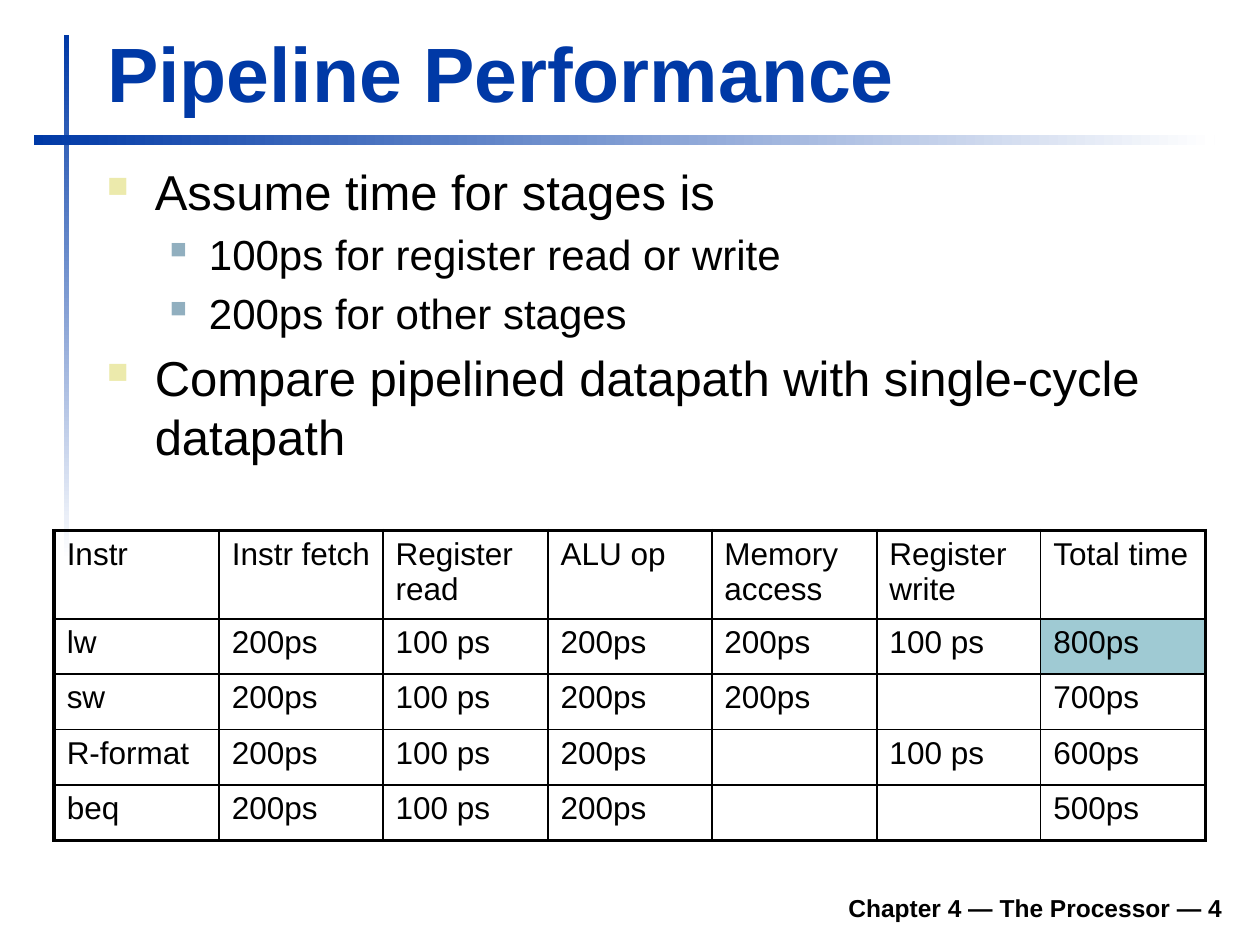
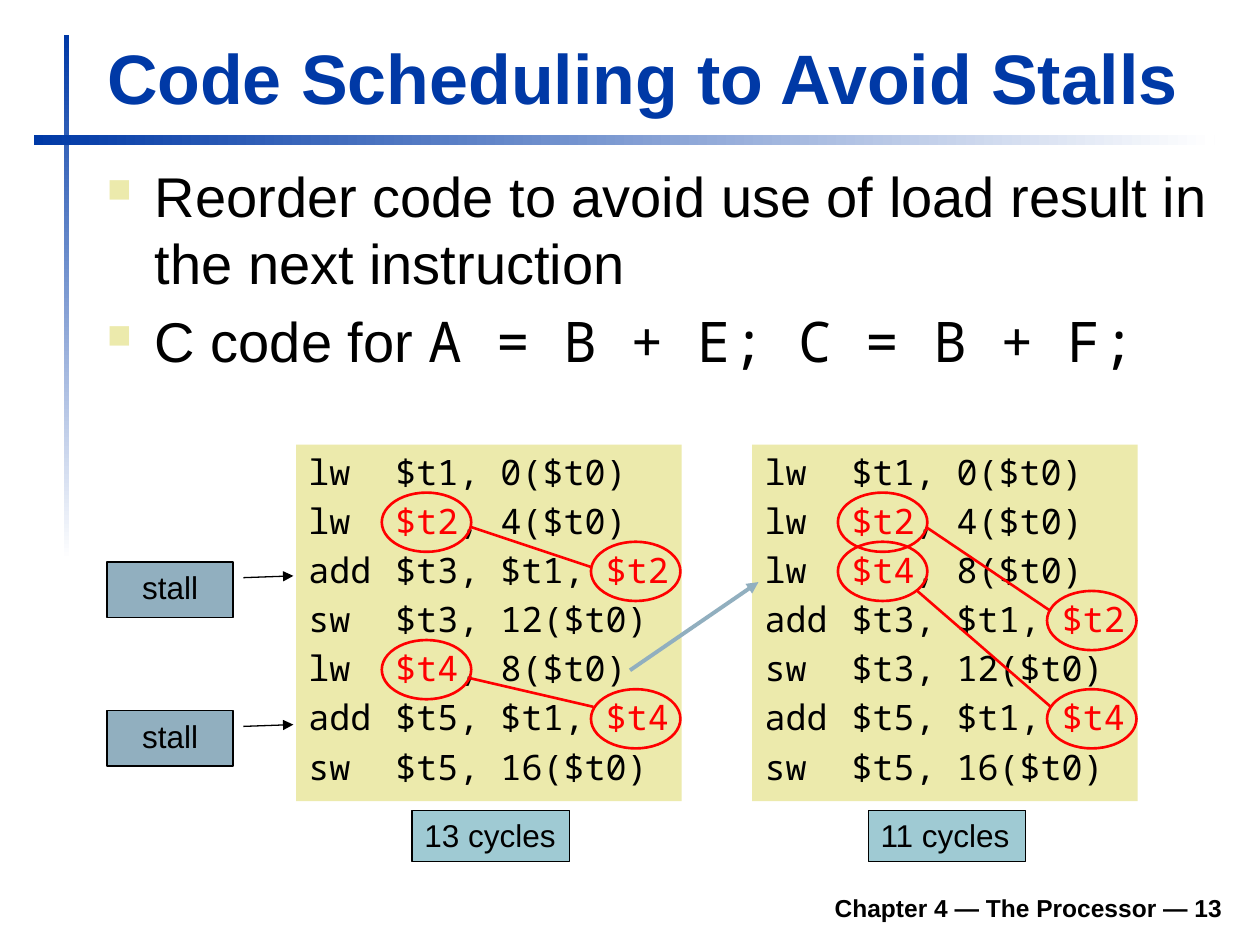
from lxml import etree
from pptx import Presentation
from pptx.dml.color import RGBColor
from pptx.enum.shapes import MSO_CONNECTOR, MSO_SHAPE
from pptx.enum.text import MSO_ANCHOR, MSO_AUTO_SIZE, PP_ALIGN
from pptx.oxml.ns import qn
from pptx.util import Inches, Pt

BLUE = RGBColor(0x00, 0x39, 0xA6)
WHITE = RGBColor(0xFF, 0xFF, 0xFF)
BLACK = RGBColor(0x00, 0x00, 0x00)
RED = RGBColor(0xFF, 0x00, 0x00)
SAND = RGBColor(0xEC, 0xEA, 0xAC)
STEEL = RGBColor(0x91, 0xAF, 0xBF)
TEAL = RGBColor(0x9F, 0xCA, 0xD3)

BODY_FONT = "Arial"
CODE_FONT = "Noto Sans Mono"
RECTANGLE = MSO_SHAPE.RECTANGLE
OVAL = MSO_SHAPE.OVAL
CALLOUT = MSO_SHAPE.LINE_CALLOUT_1
STRAIGHT = MSO_CONNECTOR.STRAIGHT
LEFT, CENTER, RIGHT = PP_ALIGN.LEFT, PP_ALIGN.CENTER, PP_ALIGN.RIGHT
TOP, BOTTOM = MSO_ANCHOR.TOP, MSO_ANCHOR.BOTTOM
FIT_SHAPE = MSO_AUTO_SIZE.SHAPE_TO_FIT_TEXT

BULLET_LEVELS = [(0.38, 0.38, SAND, 60), (0.81, 0.31, STEEL, 55)]


def add_xml(parent, tag, **attributes):
    return etree.SubElement(parent, qn(tag), attributes)


def add_space_before(properties):
    add_xml(add_xml(properties, "a:spcBef"), "a:spcPct", val="20000")


def add_arrowhead(shape):
    add_xml(shape.element.spPr.find(qn("a:ln")), "a:tailEnd", type="triangle")


class SlideBuilder:
    def __init__(self):
        self.deck = Presentation()
        self.deck.slide_width = Inches(10)
        self.deck.slide_height = Inches(7.5)
        self.page = None

    def start(self, title, size, number):
        self.page = self.deck.slides.add_slide(self.deck.slide_layouts[5])
        self.band(0.51, 0.28, 0.04, 4.17, 270)
        self.band(0.27, 1.07, 9.37, 0.08, 0)
        heading = self.page.shapes.title
        heading.left, heading.top = Inches(0.75), Inches(0.16)
        heading.width, heading.height = Inches(9.03), Inches(0.83)
        self.set_text(heading, title, size, BLUE, LEFT, BOTTOM, bold=True)
        heading.text_frame.auto_size = FIT_SHAPE
        footer = self.page.shapes.add_textbox(
            Inches(1.85), Inches(6.98), Inches(7.95), Inches(0.39))
        self.set_text(footer, f"Chapter 4 — The Processor — {number}", 14,
                      align=RIGHT, anchor=BOTTOM, bold=True)

    def style(self, span, size, color=BLACK, font=BODY_FONT, bold=False):
        span.font.name = font
        span.font.size = Pt(size)
        span.font.bold = bold
        span.font.color.rgb = color

    def set_text(self, box, text, size, color=BLACK, align=LEFT, anchor=TOP, bold=False):
        frame = box.text_frame
        frame.text = text
        frame.word_wrap = True
        frame.vertical_anchor = anchor
        para = frame.paragraphs[0]
        para.alignment = align
        for span in para.runs:
            self.style(span, size, color, bold=bold)

    def add_span(self, para, text, size, color=BLACK, font=BODY_FONT):
        span = para.add_run()
        span.text = text
        self.style(span, size, color, font)

    def shape(self, kind, left, top, width, height, fill=None, line=None, weight=0.75):
        box = self.page.shapes.add_shape(
            kind, Inches(left), Inches(top), Inches(width), Inches(height))
        box.shadow.inherit = False
        if fill is None:
            box.fill.background()
        else:
            box.fill.solid()
            box.fill.fore_color.rgb = fill
        if line is None:
            box.line.fill.background()
        else:
            box.line.color.rgb = line
            box.line.width = Pt(weight)
        return box

    def band(self, left, top, width, height, angle):
        bar = self.shape(RECTANGLE, left, top, width, height)
        bar.fill.gradient()
        bar.fill.gradient_angle = angle
        for stop, color in zip(bar.fill.gradient_stops, (BLUE, WHITE)):
            stop.color.rgb = color

    def bullets(self, height, items):
        box = self.page.shapes.add_textbox(
            Inches(0.75), Inches(1.23), Inches(9.05), Inches(height))
        frame = box.text_frame
        frame.word_wrap = True
        for index, (level, size, spans) in enumerate(items):
            para = frame.add_paragraph() if index else frame.paragraphs[0]
            para.level = level
            margin, hanging, color, percent = BULLET_LEVELS[level]
            properties = para._p.get_or_add_pPr()
            properties.set("marL", str(Inches(margin)))
            properties.set("indent", str(-Inches(hanging)))
            add_space_before(properties)
            add_xml(add_xml(properties, "a:buClr"), "a:srgbClr", val=str(color))
            add_xml(properties, "a:buSzPct", val=str(percent * 1000))
            add_xml(properties, "a:buChar", char="■")
            for text, font in spans:
                self.add_span(para, text, size, font=font)

    def code(self, left, top, lines):
        box = self.shape(RECTANGLE, left, top, 3.06, 2.83, SAND)
        frame = box.text_frame
        frame.word_wrap = False
        frame.auto_size = FIT_SHAPE
        frame.vertical_anchor = TOP
        for index, parts in enumerate(lines):
            para = frame.add_paragraph() if index else frame.paragraphs[0]
            para.alignment = LEFT
            properties = para._p.get_or_add_pPr()
            add_space_before(properties)
            tabs = add_xml(properties, "a:tabLst")
            add_xml(tabs, "a:tab", pos=str(Inches(0.69)), algn="l")
            for position, text in enumerate(parts):
                self.add_span(para, text, 20, RED if position == 1 else BLACK, CODE_FONT)

    def stall(self, top):
        box = self.shape(CALLOUT, 0.85, top, 1, 0.44, STEEL, BLACK)
        for index, value in enumerate((0.285, 1.083, 0.253, 1.479)):
            box.adjustments[index] = value
        add_arrowhead(box)
        self.set_text(box, "stall", 18, align=CENTER)

    def cycles(self, left, text):
        box = self.shape(RECTANGLE, left, 6.43, 1.25, 0.41, TEAL, BLACK)
        self.set_text(box, text, 18)
        box.text_frame.word_wrap = False
        box.text_frame.auto_size = FIT_SHAPE

    def link(self, start, end, color=RED, weight=1.5, arrow=False):
        line = self.page.shapes.add_connector(
            STRAIGHT, *(Inches(value) for value in start + end))
        line.line.color.rgb = color
        line.line.width = Pt(weight)
        if arrow:
            add_arrowhead(line)
        add_xml(line.element.spPr, "a:effectLst")

    def table(self, left, top, widths, heights, rows, highlight):
        grid = self.page.shapes.add_table(
            len(rows), len(widths), Inches(left), Inches(top),
            Inches(sum(widths)), Inches(sum(heights))).table
        grid.first_row = grid.horz_banding = False
        for column, width in zip(grid.columns, widths):
            column.width = Inches(width)
        for row, height in zip(grid.rows, heights):
            row.height = Inches(height)
        last_row, last_column = len(rows) - 1, len(widths) - 1
        for r, texts in enumerate(rows):
            for c, text in enumerate(texts):
                cell = grid.cell(r, c)
                self.set_cell_text(cell, text)
                self.borders(cell, {
                    "a:lnL": 2.25 if c == 0 else 1,
                    "a:lnR": 2.25 if c == last_column else 1,
                    "a:lnT": {0: 2.25, 1: 1.5}.get(r, 1),
                    "a:lnB": {0: 1.5, last_row: 2.25}.get(r, 1)})
                if (r, c) == highlight:
                    cell.fill.solid()
                    cell.fill.fore_color.rgb = TEAL
                else:
                    cell.fill.background()

    def set_cell_text(self, cell, text):
        cell.text_frame.text = text
        cell.vertical_anchor = TOP
        para = cell.text_frame.paragraphs[0]
        add_space_before(para._p.get_or_add_pPr())
        for span in para.runs:
            self.style(span, 18)

    def borders(self, cell, weights):
        properties = cell._tc.get_or_add_tcPr()
        for tag, weight in weights.items():
            edge = add_xml(properties, tag, w=str(Pt(weight)))
            add_xml(add_xml(edge, "a:solidFill"), "a:srgbClr", val=str(BLACK))


def build_performance(builder):
    builder.start("Pipeline Performance", 44, 4)
    builder.bullets(2.77, [
        (0, 28, [("Assume time for stages is", BODY_FONT)]),
        (1, 24, [("100ps for register read or write", BODY_FONT)]),
        (1, 24, [("200ps for other stages", BODY_FONT)]),
        (0, 28, [("Compare pipelined datapath with single-cycle datapath", BODY_FONT)]),
    ])
    stage_times = [
        ["Instr", "Instr fetch", "Register read", "ALU op", "Memory access",
         "Register write", "Total time"],
        ["lw", "200ps", "100 ps", "200ps", "200ps", "100 ps", "800ps"],
        ["sw", "200ps", "100 ps", "200ps", "200ps", "", "700ps"],
        ["R-format", "200ps", "100 ps", "200ps", "", "100 ps", "600ps"],
        ["beq", "200ps", "100 ps", "200ps", "", "", "500ps"],
    ]
    widths = [1.31, 1.3, 1.31, 1.3, 1.31, 1.3, 1.31]
    builder.table(0.43, 4.21, widths, [0.7] + [0.44] * 4, stage_times, (1, 6))


def build_scheduling(builder):
    builder.start("Code Scheduling to Avoid Stalls", 40, 13)
    builder.bullets(2.02, [
        (0, 32, [("Reorder code to avoid use of load result in the next instruction",
                  BODY_FONT)]),
        (0, 32, [("C code for ", BODY_FONT), ("A = B + E; C = B + F;", CODE_FONT)]),
    ])
    unscheduled = [
        ("lw\t$t1, 0($t0)",),
        ("lw\t", "$t2", ", 4($t0)"),
        ("add\t$t3, $t1, ", "$t2"),
        ("sw\t$t3, 12($t0)",),
        ("lw\t", "$t4", ", 8($t0)"),
        ("add\t$t5, $t1, ", "$t4"),
        ("sw\t$t5, 16($t0)",),
    ]
    scheduled = [unscheduled[index] for index in (0, 1, 4, 2, 3, 5, 6)]
    listings = [(2.35, unscheduled, "13 cycles"), (5.97, scheduled, "11 cycles")]
    for left, lines, cycles in listings:
        builder.code(left, 3.53, lines)
        builder.cycles(left + 0.92, cycles)
    for top in (4.46, 5.64):
        builder.stall(top)
    builder.link((5, 5.32), (6.02, 4.62), STEEL, 2.25, arrow=True)
    for left, lines, _ in listings:
        for row, parts in enumerate(lines):
            if len(parts) > 1:
                offset = 0.68 if len(parts) == 3 else 2.34
                builder.shape(OVAL, left + offset, 3.52 + 0.39 * row, 0.71, 0.47,
                              line=RED, weight=1.5)
    for start, end in [((3.73, 4.18), (4.69, 4.5)), ((3.72, 5.38), (4.71, 5.61)),
                       ((7.36, 4.19), (8.34, 4.85)), ((7.28, 4.69), (8.34, 5.61))]:
        builder.link(start, end)


def main():
    builder = SlideBuilder()
    build_performance(builder)
    build_scheduling(builder)
    builder.deck.save("out.pptx")


if __name__ == "__main__":
    main()
